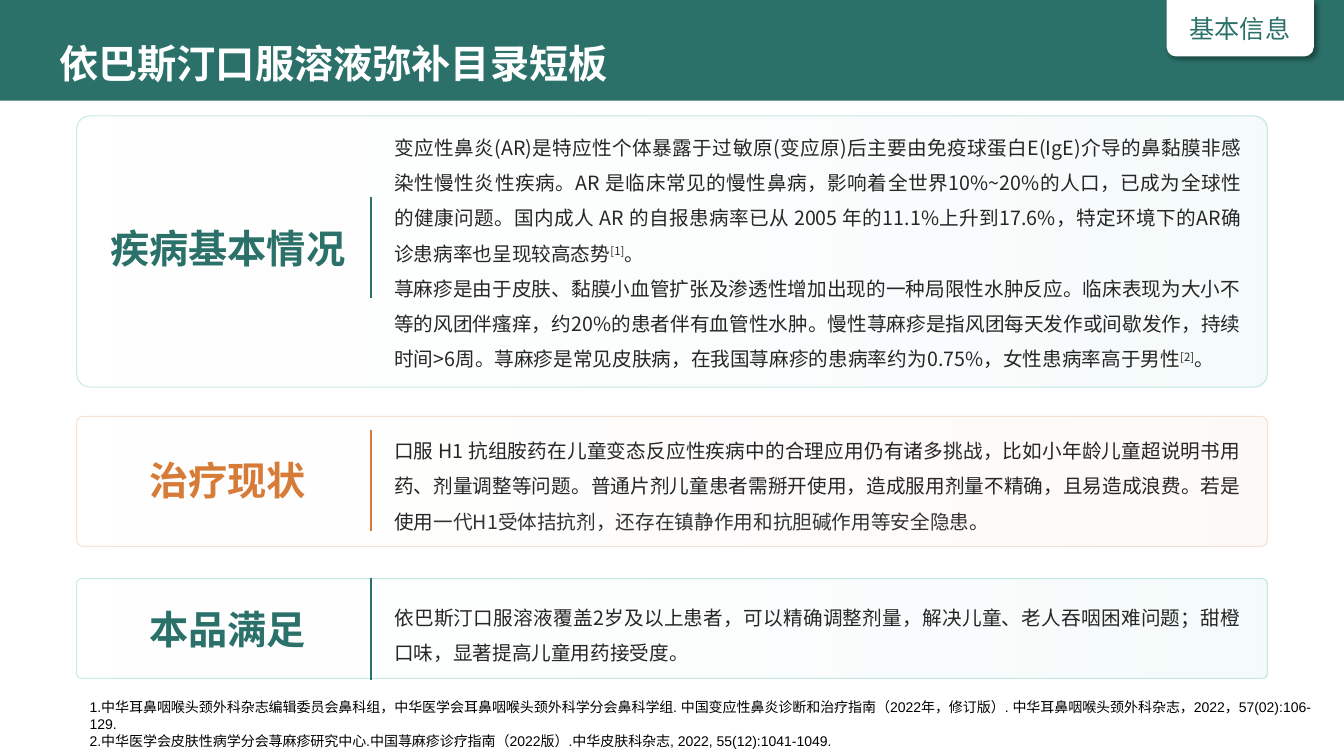
from lxml import etree
from pptx import Presentation
from pptx import util as u
from pptx.dml.color import RGBColor
from pptx.enum import shapes, text
from pptx.oxml.ns import qn

WIDTH, HEIGHT = u.Inches(13.33), u.Inches(7.5)
SANS, LATIN = "Noto Sans CJK SC", "Arial"
TEAL, ORANGE, WHITE, INK, SOFT_INK = "2B716A", "D77C38", "FFFFFF", "262626", "333333"
TEAL_PANEL = ("F2FAF9", "CCEBE8", "65C4BB")
ORANGE_PANEL = ("FDF8F5", "F7E5D7", "E7B088")
LEFT, CENTER, JUSTIFY = text.PP_ALIGN.LEFT, text.PP_ALIGN.CENTER, text.PP_ALIGN.JUSTIFY

# Columns in percent of the slide width: (left, width)
PANEL_COL, LABEL_COL, BODY_COL = (5.7, 88.6), (7.65, 18.6), (29.33, 63)
DIVIDER_X = 27.6
# Row heights in percent of the slide height
TEXT_ROW, DIVIDER_ROW = 21.47, 13.4

# Each section: label, accent, panel colours, panel top, panel height, text centre, paragraphs.
# A paragraph is a list of (words, colour, is_citation).
SECTIONS = [
    ("疾病基本情况", TEAL, TEAL_PANEL, 15.33, 35.87, 32.73, [
        [("变应性鼻炎(AR)是特应性个体暴露于过敏原(变应原)后主要由免疫球蛋白E(IgE)介导的鼻黏膜"
          "非感染性慢性炎性疾病。AR 是临床常见的慢性鼻病，影响着全世界10%~20%的人口，已成为全球性的"
          "健康问题。国内成人 AR 的自报患病率已从 2005 年的11.1%上升到17.6%，特定环境下的AR确诊"
          "患病率也呈现较高态势", INK, False), ("[1]", INK, True), ("。", INK, False)],
        [("荨麻疹是由于皮肤、黏膜小血管扩张及渗透性增加出现的一种局限性水肿反应。临床表现为大小不等的"
          "风团伴瘙痒，约20%的患者伴有血管性水肿。慢性荨麻疹是指风团每天发作或间歇发作，持续时间>6周。"
          "荨麻疹是常见皮肤病，在我国荨麻疹的患病率约为0.75%，女性患病率高于男性", INK, False),
         ("[2]", INK, True), ("。", INK, False)]]),
    ("治疗现状", ORANGE, ORANGE_PANEL, 55.07, 17.2, 63.53, [
        [("口服 H1 抗组胺药在儿童变态反应性疾病中的合理应用仍有诸多挑战，比如小年龄儿童超说明书用药、"
          "剂量调整等问题。普通片剂儿童患者需掰开使用，造成服用剂量不精确，且易造成浪费。若是使用",
          INK, False),
         ("一代H1受体拮抗剂，还存在镇静作用和抗胆碱作用等安全隐患", SOFT_INK, False),
         ("。", INK, False)]]),
    ("本品满足", TEAL, TEAL_PANEL, 76.53, 13.2, 83.2, [
        [("依巴斯汀口服溶液覆盖2岁及以上患者，可以精确调整剂量，解决儿童、老人吞咽困难问题；"
          "甜橙口味，显著提高儿童用药接受度。", INK, False)]]),
]

REFERENCES = [
    "1.中华耳鼻咽喉头颈外科杂志编辑委员会鼻科组，中华医学会耳鼻咽喉头颈外科学分会鼻科学组. "
    "中国变应性鼻炎诊断和治疗指南（2022年，修订版）. 中华耳鼻咽喉头颈外科杂志，2022，57(02):106-129.",
    "2.中华医学会皮肤性病学分会荨麻疹研究中心.中国荨麻疹诊疗指南（2022版）.中华皮肤科杂志, "
    "2022, 55(12):1041-1049.",
]


def rgb(code):
    return RGBColor.from_string(code)


def x(percent):
    return round(WIDTH * percent / 100)


def y(percent):
    return round(HEIGHT * percent / 100)


def add_alpha(color, percent):
    etree.SubElement(color, qn("a:alpha"), val=str(percent * 1000))


def add_block(slide, kind, left, top, width, height, fill=None):
    block = slide.shapes.add_shape(kind, x(left), y(top), x(width), y(height))
    block.shadow.inherit = False
    block.line.fill.background()
    if fill:
        block.fill.solid()
        block.fill.fore_color.rgb = rgb(fill)
    return block


def add_panel(slide, top, height, colors):
    """Rounded panel that fades in from left to right."""
    start, end, border = colors
    panel = add_block(slide, shapes.MSO_SHAPE.ROUNDED_RECTANGLE,
                      PANEL_COL[0], top, PANEL_COL[1], height)
    panel.adjustments[0] = 0.05
    panel.fill.gradient()
    panel.fill.gradient_angle = 0
    for stop, color in zip(panel.fill.gradient_stops, (start, end)):
        stop.color.rgb = rgb(color)
    stops = panel.element.spPr.findall(".//" + qn("a:gs"))
    for stop, opacity in zip(stops, (0, 20)):
        add_alpha(stop[0], opacity)
    panel.line.color.rgb = rgb(border)
    panel.line.width = u.Pt(0.75)
    add_alpha(panel.element.spPr.find(qn("a:ln")).find(".//" + qn("a:srgbClr")), 35)


def add_tab(slide):
    """White tab hanging from the top edge, with a soft shadow."""
    tab = add_block(slide, shapes.MSO_SHAPE.ROUND_2_SAME_RECTANGLE, 86.8, 0, 10.95, 7.47, WHITE)
    tab.rotation = 180
    effects = tab.element.spPr.find(qn("a:effectLst"))
    shadow = etree.SubElement(effects, qn("a:outerShdw"), blurRad=str(u.Pt(4)),
                              dist=str(u.Pt(3)), dir="2700000", algn="tl", rotWithShape="0")
    add_alpha(etree.SubElement(shadow, qn("a:srgbClr"), val="000000"), 40)


def add_divider(slide, center, color):
    top, bottom = center - DIVIDER_ROW / 2, center + DIVIDER_ROW / 2
    divider = slide.shapes.add_connector(shapes.MSO_CONNECTOR.STRAIGHT,
                                         x(DIVIDER_X), y(top), x(DIVIDER_X), y(bottom))
    divider.line.color.rgb = rgb(color)
    divider.line.width = u.Pt(1)
    etree.SubElement(divider.element.spPr, qn("a:effectLst"))


def add_text(slide, left, top, width, height, paragraphs, size, font, bold=False,
             align=LEFT, spacing=None, middle=False, inset=True, wrap=True):
    box = slide.shapes.add_textbox(x(left), y(top), x(width), y(height))
    frame = box.text_frame
    frame.word_wrap = wrap
    if middle:
        frame.vertical_anchor = text.MSO_ANCHOR.MIDDLE
    if not inset:
        frame.margin_left = frame.margin_right = frame.margin_top = frame.margin_bottom = 0
    for index, parts in enumerate(paragraphs):
        paragraph = frame.add_paragraph() if index else frame.paragraphs[0]
        paragraph.alignment = align
        if spacing:
            paragraph.line_spacing = spacing
        for words, color, is_citation in parts:
            run = paragraph.add_run()
            run.text = words
            run.font.size = u.Pt(size)
            run.font.bold = bold
            run.font.name = font
            run.font.color.rgb = rgb(color)
            properties = run.font._element
            etree.SubElement(properties, qn("a:ea"), typeface=SANS)
            if is_citation:
                properties.set("baseline", "30000")


def add_section(slide, label, accent, colors, top, height, center, paragraphs):
    add_panel(slide, top, height, colors)
    text_top = center - TEXT_ROW / 2
    add_text(slide, LABEL_COL[0], text_top, LABEL_COL[1], TEXT_ROW, [[(label, accent, False)]],
             28, SANS, bold=True, align=CENTER, middle=True, inset=False)
    add_text(slide, BODY_COL[0], text_top, BODY_COL[1], TEXT_ROW, paragraphs,
             14, SANS, align=JUSTIFY, spacing=1.5, middle=True, inset=False)
    add_divider(slide, center, accent)


def main():
    deck = Presentation()
    deck.slide_width, deck.slide_height = WIDTH, HEIGHT
    slide = deck.slides.add_slide(deck.slide_layouts[6])

    # Header bar, title and corner tab
    add_block(slide, shapes.MSO_SHAPE.RECTANGLE, 0, 0, 100, 13.33, TEAL)
    add_text(slide, 3.68, 0.93, 81.77, 15.6, [[("依巴斯汀口服溶液弥补目录短板", WHITE, False)]],
             28, LATIN, bold=True, spacing=0.9, middle=True)
    add_tab(slide)
    add_text(slide, 87.77, 1.07, 9, 5.33, [[("基本信息", TEAL, False)]], 18, LATIN, wrap=False)

    # Three labelled sections
    for section in SECTIONS:
        add_section(slide, *section)

    # References
    add_text(slide, 5.93, 91.73, 93.4, 5.87,
             [[(reference, "000000", False)] for reference in REFERENCES], 10, LATIN)

    deck.save("out.pptx")


if __name__ == "__main__":
    main()
